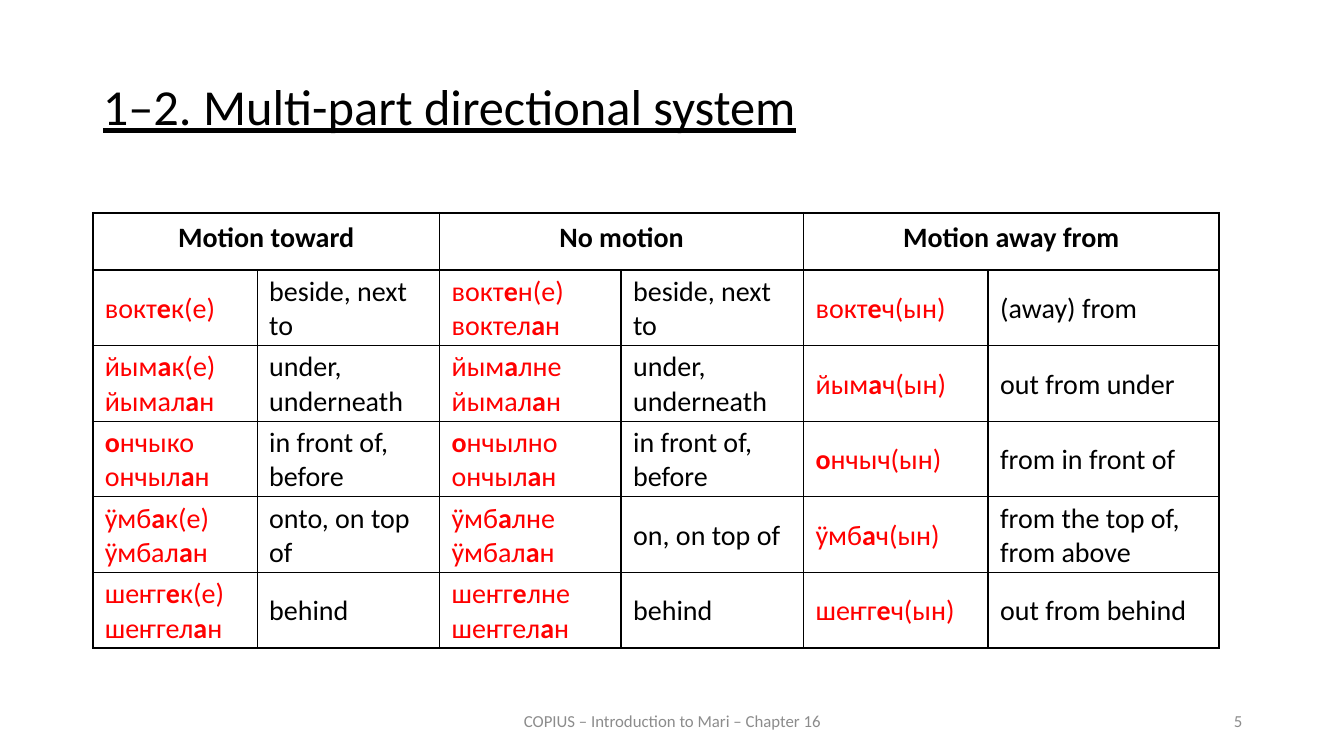
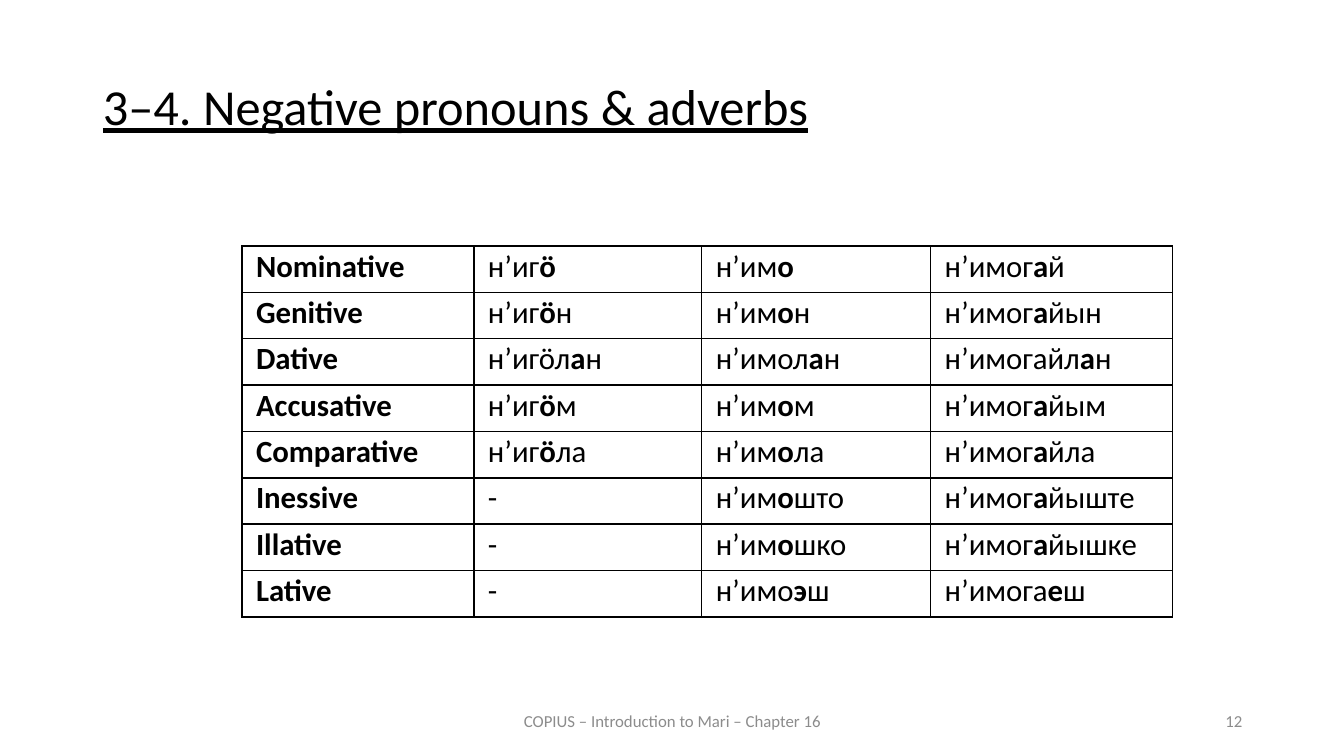
"""Build two Mari grammar slides with case and direction tables."""
import dataclasses

import lxml.etree
import pptx
import pptx.dml.color
import pptx.enum.text
import pptx.oxml.ns
import pptx.util

PX = 9144
ALIGN = pptx.enum.text.PP_ALIGN
ANCHOR = pptx.enum.text.MSO_ANCHOR
qn = pptx.oxml.ns.qn


@dataclasses.dataclass(frozen=True)
class Theme:
    font: str = "Calibri"
    ink: str = "000000"
    mari: str = "FF0000"
    muted: str = "8C8C8C"
    title: int = 36
    direction: int = 20
    pronoun: int = 22
    footer: int = 12
    thin: float = 1
    heavy: float = 1.5


THEME = Theme()
FOOTER = "COPIUS – Introduction to Mari – Chapter 16"

DIRECTION_HEADS = ["Motion toward", "No motion", "Motion away from"]
DIRECTIONS = [
    ("вокт*е*к(е)", "beside, next to", "вокт*е*н(е)\nвоктел*а*н", "beside, next to",
     "вокт*е*ч(ын)", "(away) from"),
    ("йым*а*к(е)\nйымал*а*н", "under, underneath", "йым*а*лне\nйымал*а*н",
     "under, underneath", "йым*а*ч(ын)", "out from under"),
    ("*о*нчыко\nончыл*а*н", "in front of, before", "*о*нчылно\nончыл*а*н",
     "in front of, before", "*о*нчыч(ын)", "from in front of"),
    ("ӱмб*а*к(е)\nӱмбал*а*н", "onto, on top of", "ӱмб*а*лне\nӱмбал*а*н",
     "on, on top of", "ӱмб*а*ч(ын)", "from the top of, from above"),
    ("шеҥг*е*к(е)\nшеҥгел*а*н", "behind", "шеҥг*е*лне\nшеҥгел*а*н", "behind",
     "шеҥг*е*ч(ын)", "out from behind"),
]
PRONOUNS = [
    ("Nominative", "н’иг*ӧ*", "н’им*о*", "н’имог*а*й"),
    ("Genitive", "н’иг*ӧ*н", "н’им*о*н", "н’имог*а*йын"),
    ("Dative", "н’игӧл*а*н", "н’имол*а*н", "н’имогайл*а*н"),
    ("Accusative", "н’иг*ӧ*м", "н’им*о*м", "н’имог*а*йым"),
    ("Comparative", "н’иг*ӧ*ла", "н’им*о*ла", "н’имог*а*йла"),
    ("Inessive", "-", "н’им*о*што", "н’имог*а*йыште"),
    ("Illative", "-", "н’им*о*шко", "н’имог*а*йышке"),
    ("Lative", "-", "н’имо*э*ш", "н’имога*е*ш"),
]


def px(*lengths):
    return [pptx.util.Emu(n * PX) for n in lengths]


def write(tf, text, *, size, color=THEME.ink, bold=False, underline=None,
          align=ALIGN.LEFT, anchor=ANCHOR.TOP, spacing=None):
    tf.word_wrap = True
    tf.vertical_anchor = anchor
    for i, line in enumerate(text.split("\n")):
        p = tf.add_paragraph() if i else tf.paragraphs[0]
        p.alignment = align
        p.line_spacing = spacing
        p.space_before = pptx.util.Pt(0)
        for j, part in enumerate(line.split("*")):
            if part:
                r = p.add_run()
                r.text = part
                r.font.name = THEME.font
                r.font.size = pptx.util.Pt(size)
                r.font.bold = bold != (j % 2 == 1)
                r.font.underline = underline
                r.font.color.rgb = pptx.dml.color.RGBColor.from_string(color)


def add_slide(prs, title, number):
    s = prs.slides.add_slide(prs.slide_layouts[5])
    sp = s.shapes.title
    sp.left, sp.top, sp.width, sp.height = px(92, 76, 1150, 83)
    sp.text_frame.auto_size = pptx.enum.text.MSO_AUTO_SIZE.NONE
    write(sp.text_frame, title, size=THEME.title, underline=True,
          align=ALIGN.JUSTIFY, spacing=0.9)
    for text, left, width, align in ((FOOTER, 442, 450, ALIGN.CENTER),
                                     (str(number), 942, 300, ALIGN.RIGHT)):
        sp = s.shapes.add_textbox(*px(left, 695, width, 40))
        write(sp.text_frame, text, size=THEME.footer, color=THEME.muted,
              align=align, anchor=ANCHOR.MIDDLE)
    return s


def add_grid(s, left, top, cols, rows):
    frame = s.shapes.add_table(len(rows), len(cols),
                               *px(left, top, sum(cols), sum(rows)))
    table = frame.table
    table.first_row = table.horz_banding = False
    for col, width in zip(table.columns, px(*cols)):
        col.width = width
    for row, height in zip(table.rows, px(*rows)):
        row.height = height
    return table


def set_margins(cell, side, top, bottom):
    cell.margin_left, cell.margin_right = px(side, side)
    cell.margin_top, cell.margin_bottom = px(top, bottom)


def rule_grid(table, heavy_cols, heavy_rows):
    for y, row in enumerate(table.rows):
        for x, cell in enumerate(row.cells):
            right = x + (cell.span_width if cell.is_merge_origin else 1)
            tcPr = cell._tc.get_or_add_tcPr()
            for tag, heavy in (("a:lnL", x in heavy_cols),
                               ("a:lnR", right in heavy_cols),
                               ("a:lnT", y in heavy_rows),
                               ("a:lnB", y + 1 in heavy_rows)):
                width = pptx.util.Pt(THEME.heavy if heavy else THEME.thin)
                ln = lxml.etree.SubElement(tcPr, qn(tag), w=str(int(width)))
                fill = lxml.etree.SubElement(ln, qn("a:solidFill"))
                lxml.etree.SubElement(fill, qn("a:srgbClr"), val=THEME.ink)
            cell.fill.background()


def add_directions(prs):
    s = add_slide(prs, "1–2. Multi-part directional system", 5)
    table = add_grid(s, 92, 211, [163, 181, 180, 181, 183, 229],
                     [57] + [75] * len(DIRECTIONS))
    for i, head in enumerate(DIRECTION_HEADS):
        cell = table.cell(0, 2 * i)
        cell.merge(table.cell(0, 2 * i + 1))
        set_margins(cell, 17, 8, 8)
        write(cell.text_frame, head, size=THEME.direction, bold=True,
              align=ALIGN.CENTER)
    for y, row in enumerate(DIRECTIONS, 1):
        for x, text in enumerate(row):
            cell = table.cell(y, x)
            set_margins(cell, 12, 2, 0)
            write(cell.text_frame, text, size=THEME.direction,
                  color=THEME.ink if x % 2 else THEME.mari)
            cell.vertical_anchor = ANCHOR.MIDDLE
    rule_grid(table, {0, 2, 4, 6}, {0, 1, 6})


def add_pronouns(prs):
    s = add_slide(prs, "3–4. Negative pronouns & adverbs", 12)
    table = add_grid(s, 240, 244, [230, 226, 227, 240], [46] * len(PRONOUNS))
    for y, row in enumerate(PRONOUNS):
        for x, text in enumerate(row):
            cell = table.cell(y, x)
            set_margins(cell, 14, 2, 0)
            write(cell.text_frame, text, size=THEME.pronoun, bold=x == 0,
                  align=ALIGN.JUSTIFY)
    rule_grid(table, {0, 1}, {0, 5, 8})


def main():
    prs = pptx.Presentation()
    prs.slide_width, prs.slide_height = px(1333, 750)
    add_directions(prs)
    add_pronouns(prs)
    prs.save("out.pptx")


if __name__ == "__main__":
    main()
